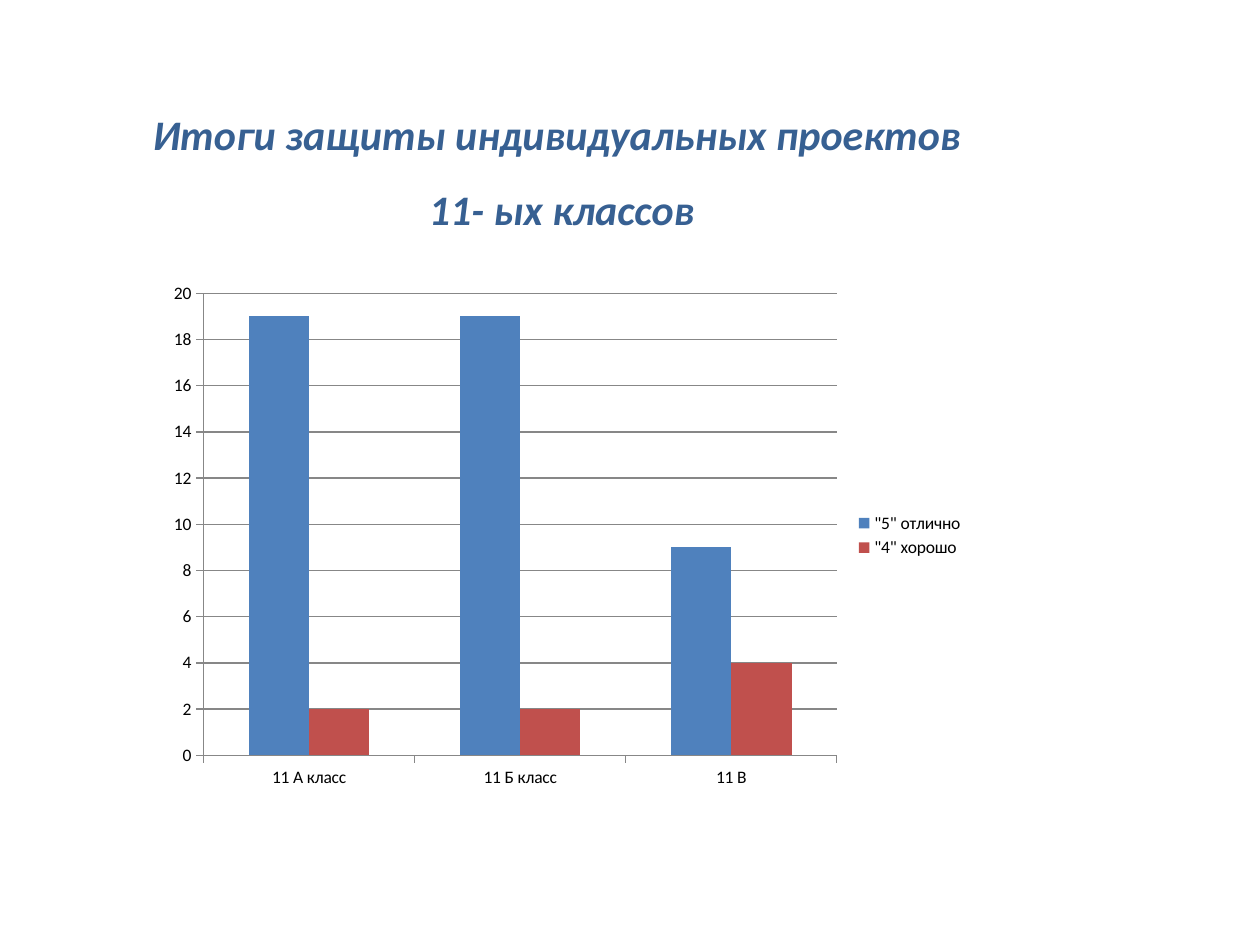
"""Build a slide with the project results of the senior classes."""
import pptx
import pptx.util
import pptx.chart.data
import pptx.dml.color
import pptx.enum.chart
import pptx.enum.text

Pt = pptx.util.Pt
Kind = pptx.enum.chart

LINES = ["Итоги защиты индивидуальных проектов ", "11- ых классов"]
CLASSES = ["11 А класс", "11 Б класс", "11 В"]
GRADES = [
    ('"5" отлично', [19, 19, 9], "4F81BD"),
    ('"4" хорошо', [2, 2, 4], "C0504D"),
]
TITLE_BOX = (66, 54, 510, 82)
CHART_BOX = (90, 156, 468, 300)
TITLE_FONT = {"name": "Calibri", "size": Pt(24), "bold": True, "italic": True}
CHART_FONT = {"name": "Calibri", "size": Pt(10), "bold": False}
GREY = "878787"


def tint(color, code):
    color.rgb = pptx.dml.color.RGBColor.from_string(code)


def style(item, values):
    for key, value in values.items():
        setattr(item, key, value)


def rule(line):
    line.width = Pt(0.75)
    tint(line.color, GREY)


def add_title(slide):
    frame = slide.shapes.add_textbox(*map(Pt, TITLE_BOX)).text_frame
    style(frame, {"word_wrap": True,
                  "auto_size": pptx.enum.text.MSO_AUTO_SIZE.SHAPE_TO_FIT_TEXT})
    for i, text in enumerate(LINES):
        para = frame.add_paragraph() if i else frame.paragraphs[0]
        style(para, {"alignment": pptx.enum.text.PP_ALIGN.CENTER,
                     "line_spacing": 1.15, "space_after": Pt(10)})
        run = para.add_run()
        run.text = text
        style(run.font, TITLE_FONT)
        tint(run.font.color, "376092")


def add_chart(slide):
    data = pptx.chart.data.CategoryChartData()
    data.categories = CLASSES
    for name, counts, _ in GRADES:
        data.add_series(name, counts)
    chart = slide.shapes.add_chart(
        Kind.XL_CHART_TYPE.COLUMN_CLUSTERED, *map(Pt, CHART_BOX), data).chart
    style(chart, {"has_title": False, "has_legend": True})
    style(chart.font, CHART_FONT)
    tint(chart.font.color, "000000")
    style(chart.legend, {"position": Kind.XL_LEGEND_POSITION.RIGHT,
                         "include_in_layout": False})
    for axis in (chart.category_axis, chart.value_axis):
        style(axis, {"major_tick_mark": Kind.XL_TICK_MARK.OUTSIDE,
                     "minor_tick_mark": Kind.XL_TICK_MARK.NONE})
        rule(axis.format.line)
    style(chart.value_axis, {"minimum_scale": 0, "maximum_scale": 20,
                             "major_unit": 2, "has_major_gridlines": True})
    rule(chart.value_axis.major_gridlines.format.line)
    plot = chart.plots[0]
    style(plot, {"gap_width": 150, "overlap": 0, "vary_by_categories": False})
    for series, (_, _, code) in zip(plot.series, GRADES):
        series.format.fill.solid()
        tint(series.format.fill.fore_color, code)


def main():
    deck = pptx.Presentation()
    style(deck, {"slide_width": Pt(720), "slide_height": Pt(540)})
    slide = deck.slides.add_slide(deck.slide_layouts[6])
    add_chart(slide)
    add_title(slide)
    deck.save("out.pptx")


if __name__ == "__main__":
    main()
